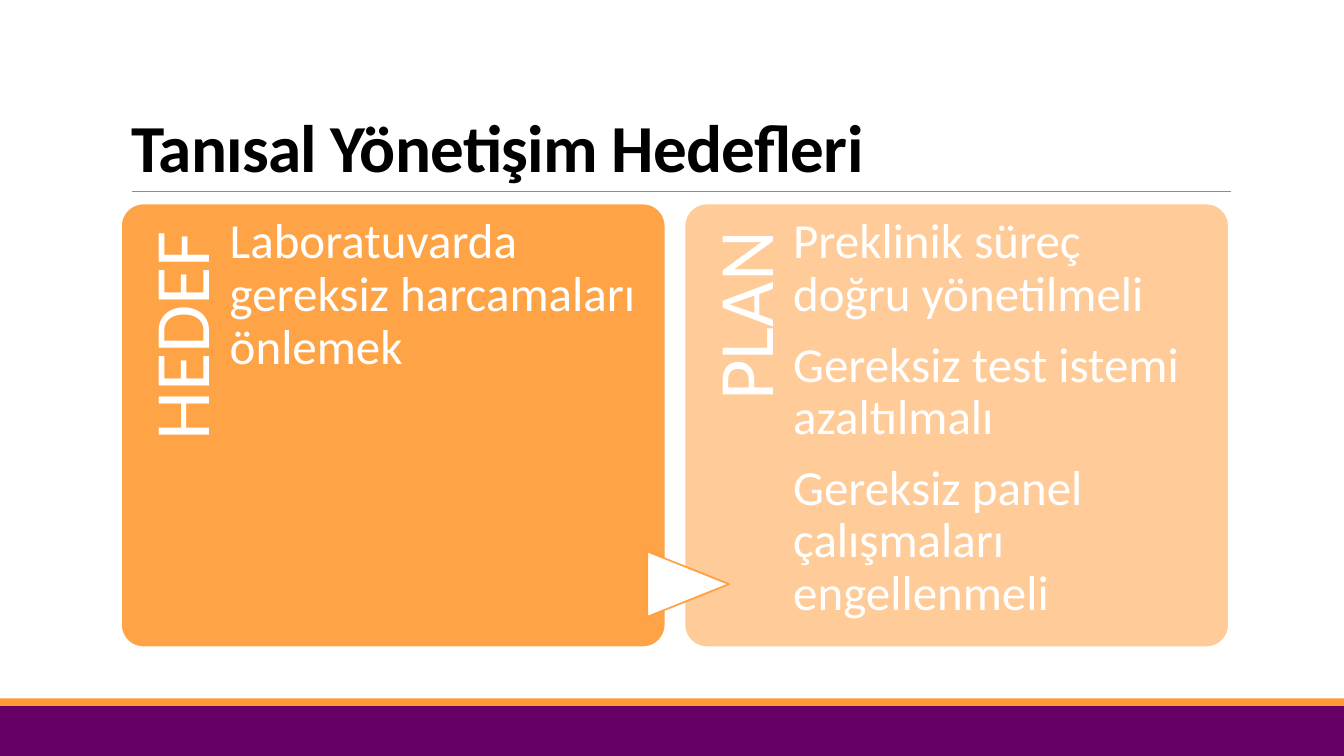
from lxml.etree import SubElement
from pptx import Presentation
from pptx.dml.color import RGBColor
from pptx.enum.shapes import MSO_CONNECTOR, MSO_SHAPE
from pptx.enum.text import MSO_ANCHOR, MSO_AUTO_SIZE, PP_ALIGN
from pptx.oxml.ns import qn
from pptx.util import Cm, Pt

TITLE = "Tanısal Yönetişim Hedefleri"
CARDS = [
    ("HEDEF", 90, ["Laboratuvarda gereksiz harcamaları önlemek"]),
    ("PLAN", 50, [
        "Preklinik süreç doğru yönetilmeli",
        "Gereksiz test istemi azaltılmalı",
        "Gereksiz panel çalışmaları engellenmeli",
    ]),
]

FONT = "Calibri"
ORANGE = RGBColor(0xFF, 0x99, 0x33)
PURPLE = RGBColor(0x66, 0x00, 0x66)
WHITE = RGBColor(0xFF, 0xFF, 0xFF)
BLACK = RGBColor(0x00, 0x00, 0x00)
GRAY = RGBColor(0x8C, 0x8C, 0x8C)

SLIDE_WIDTH, SLIDE_HEIGHT = 33.87, 19.05
CARD_LEFT, CARD_TOP, CARD_WIDTH, CARD_HEIGHT = 3.05, 5.13, 13.72, 11.18
CARD_STEP = 14.2
LABEL_LENGTH, LABEL_HEIGHT = 9.17, 2.74
TEXT_WIDTH = 10.24
ARROW_WIDTH, ARROW_HEIGHT = 1.65, 2.06
ARROW_CENTER_X, ARROW_CENTER_Y = 17.34, 14.72


def set_alpha(color_format_owner, percent):
    """Set the opacity of a solid fill found inside an XML element."""
    color = color_format_owner.find(qn("a:solidFill"))[0]
    SubElement(color, qn("a:alpha")).set("val", str(percent * 1000))


def add_block(slide, kind, left, top, width, height, fill, line=None):
    """Add a filled preset shape without a shadow."""
    block = slide.shapes.add_shape(kind, Cm(left), Cm(top), Cm(width), Cm(height))
    block.shadow.inherit = False
    block.fill.solid()
    block.fill.fore_color.rgb = fill
    if line is None:
        block.line.fill.background()
    else:
        block.line.color.rgb = line
        block.line.width = Pt(1.25)
    return block


def write(frame, lines, size, color, spacing, align=PP_ALIGN.LEFT, after=0):
    """Write one paragraph per line and return the text runs."""
    frame.word_wrap = True
    frame.auto_size = MSO_AUTO_SIZE.NONE
    spans = []
    for index, line in enumerate(lines):
        para = frame.add_paragraph() if index else frame.paragraphs[0]
        para.alignment = align
        para.line_spacing = spacing
        para.space_after = Pt(after)
        span = para.add_run()
        span.text = line
        span.font.name = FONT
        span.font.size = Pt(size)
        span.font.color.rgb = color
        spans.append(span)
    return spans


def add_text(slide, left, top, width, height, inset_top, inset_right, lines, size, align):
    """Add a white text box with the given insets."""
    box = slide.shapes.add_textbox(Cm(left), Cm(top), Cm(width), Cm(height))
    frame = box.text_frame
    frame.margin_left = frame.margin_bottom = 0
    frame.margin_top, frame.margin_right = Cm(inset_top), Cm(inset_right)
    write(frame, lines, size, WHITE, 0.9, align, size * 0.35)
    return box


def add_card(slide, left, label, opacity, lines):
    """Add a rounded card with an upright label and its text."""
    card = add_block(slide, MSO_SHAPE.ROUNDED_RECTANGLE, left, CARD_TOP,
                     CARD_WIDTH, CARD_HEIGHT, ORANGE, WHITE)
    card.adjustments[0] = 0.05
    set_alpha(card.element.spPr, opacity)
    label_left = left + (LABEL_HEIGHT - LABEL_LENGTH) / 2
    label_top = CARD_TOP + (LABEL_LENGTH - LABEL_HEIGHT) / 2
    label_box = add_text(slide, label_left, label_top, LABEL_LENGTH, LABEL_HEIGHT,
                         0.53, 0.69, [label], 56, PP_ALIGN.RIGHT)
    label_box.rotation = 270
    add_text(slide, left + LABEL_HEIGHT, CARD_TOP, TEXT_WIDTH, CARD_HEIGHT,
             0.33, 0, lines, 35, PP_ALIGN.LEFT)


def add_title(slide):
    """Fill the title placeholder and draw the rule below it."""
    title = slide.shapes.title
    title.left, title.top, title.width, title.height = Cm(3.05), Cm(0.79), Cm(27.94), Cm(4.04)
    title.text_frame.vertical_anchor = MSO_ANCHOR.BOTTOM
    span = write(title.text_frame, [TITLE], 48, BLACK, 0.85)[0]
    span.font.bold = True
    span.font._element.set("spc", "-50")
    rule = slide.shapes.add_connector(MSO_CONNECTOR.STRAIGHT, Cm(3.33), Cm(4.83), Cm(31.01), Cm(4.83))
    rule.line.color.rgb = GRAY
    rule.line.width = Pt(0.5)
    SubElement(rule._element.spPr, qn("a:effectLst"))


def main():
    """Build the slide and save the deck."""
    deck = Presentation()
    deck.slide_width, deck.slide_height = Cm(SLIDE_WIDTH), Cm(SLIDE_HEIGHT)
    page = deck.slides.add_slide(deck.slide_layouts[5])
    add_block(page, MSO_SHAPE.RECTANGLE, 0, 17.78, SLIDE_WIDTH, 1.27, PURPLE)
    add_block(page, MSO_SHAPE.RECTANGLE, 0, 17.6, SLIDE_WIDTH, 0.18, ORANGE)
    add_title(page)
    for index, (label, opacity, lines) in enumerate(CARDS):
        add_card(page, CARD_LEFT + index * CARD_STEP, label, opacity, lines)
    arrow = add_block(page, MSO_SHAPE.FLOWCHART_EXTRACT, ARROW_CENTER_X - ARROW_WIDTH / 2,
                      ARROW_CENTER_Y - ARROW_HEIGHT / 2, ARROW_WIDTH, ARROW_HEIGHT, WHITE, ORANGE)
    arrow.rotation = 90
    set_alpha(arrow.element.spPr.find(qn("a:ln")), 90)
    deck.save("out.pptx")


if __name__ == "__main__":
    main()
